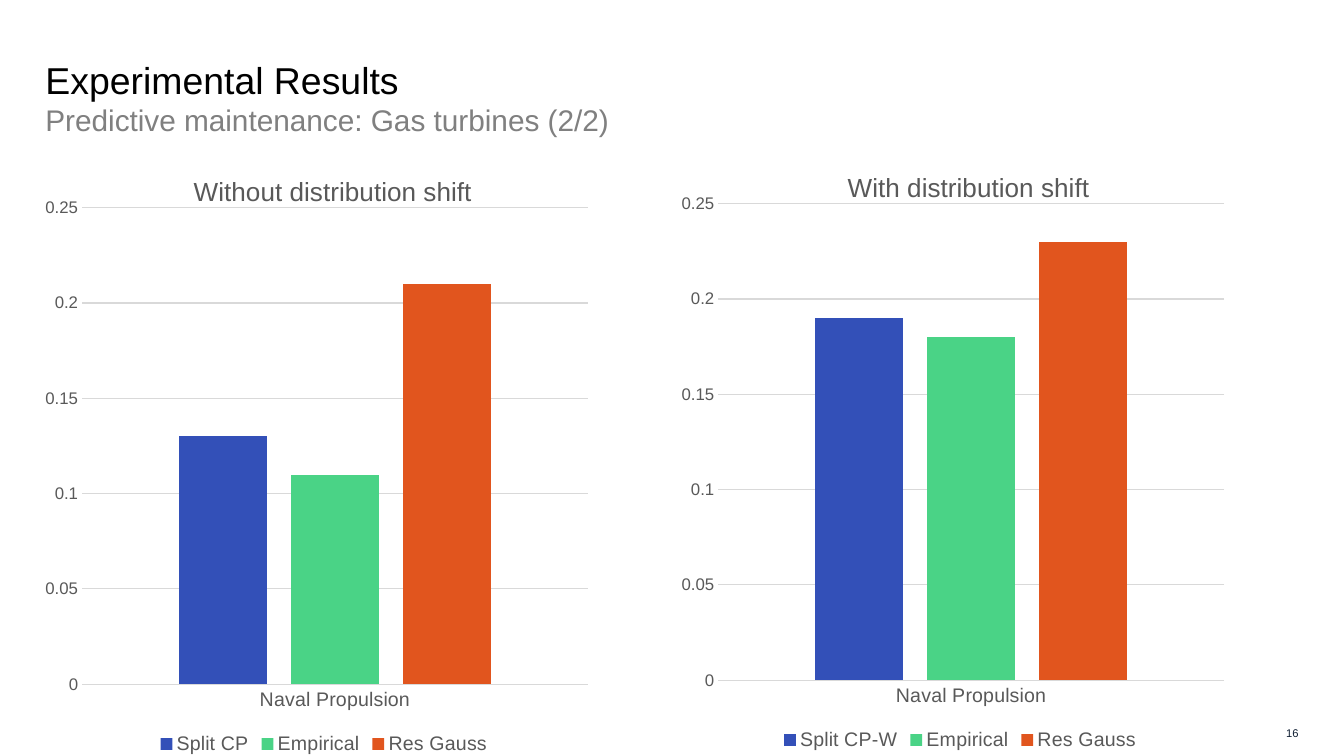
from lxml.etree import SubElement
from pptx import Presentation
from pptx.chart.data import CategoryChartData
from pptx.dml.color import RGBColor
from pptx.enum.chart import XL_CHART_TYPE, XL_LEGEND_POSITION, XL_TICK_MARK
from pptx.enum.text import MSO_ANCHOR, PP_ALIGN
from pptx.oxml.ns import qn
from pptx.util import Inches, Pt

W, H = 13.33, 7.5
FONT = "Arial"
COLORS = {"title": "000000", "subtitle": "808080", "label": "595959",
          "grid": "D9D9D9", "number": "0F1E32",
          "bars": ["3350B8", "4AD386", "E1551E"]}
LEFT = 0.45
CHART_W, CHART_H = 5.52, 6.07


def rgb(hex_color):
    return RGBColor.from_string(hex_color)


def style_font(font, size, color):
    font.name, font.size, font.bold = FONT, Pt(size), False
    font.color.rgb = rgb(color)


def add_run(p, text, size, color):
    r = p.add_run()
    r.text = text
    style_font(r.font, size, color)


def place(sp, box):
    sp.left, sp.top, sp.width, sp.height = map(Inches, box)


def clear_margins(tf):
    tf.margin_left = tf.margin_right = tf.margin_top = tf.margin_bottom = 0
    tf.word_wrap = True
    tf.vertical_anchor = MSO_ANCHOR.MIDDLE


def set_layout(parent, **shares):
    """Fix a chart part's place by shares of the chart's size."""
    layout = parent.find(qn("c:layout"))
    if layout is None:
        layout = SubElement(parent, qn("c:layout"))
        anchor = parent.find(qn("c:tx"))
        if anchor is None:
            parent.insert(0, layout)
        else:
            anchor.addnext(layout)
    manual = SubElement(layout, qn("c:manualLayout"))
    if "w" in shares:
        SubElement(manual, qn("c:layoutTarget")).set("val", "inner")
    for key in "xy":
        SubElement(manual, qn(f"c:{key}Mode")).set("val", "edge")
    for key, value in shares.items():
        SubElement(manual, qn(f"c:{key}")).set("val", str(value))


def add_heading(s, box, title, subtitle):
    sp = s.shapes.title
    place(sp, box)
    tf = sp.text_frame
    clear_margins(tf)
    p = tf.paragraphs[0]
    p.alignment = PP_ALIGN.LEFT
    add_run(p, title, 26.7, COLORS["title"])
    p.add_line_break()
    add_run(p, subtitle, 21.3, COLORS["subtitle"])


def add_bar_chart(s, box, title, title_x, values):
    data = CategoryChartData()
    data.categories = ["Naval Propulsion"]
    for name, value in values.items():
        data.add_series(name, [value])
    chart = s.shapes.add_chart(XL_CHART_TYPE.COLUMN_CLUSTERED,
                               *map(Inches, box), data).chart
    style_font(chart.font, 10, COLORS["title"])

    chart.has_title = True
    p = chart.chart_title.text_frame.paragraphs[0]
    add_run(p, title, 18.67, COLORS["label"])
    chart.chart_title.include_in_layout = False
    set_layout(chart.chart_title._element, x=title_x, y=0.037)

    chart.has_legend = True
    chart.legend.position = XL_LEGEND_POSITION.BOTTOM
    chart.legend.include_in_layout = False
    style_font(chart.legend.font, 14, COLORS["label"])

    plot = chart.plots[0]
    plot.gap_width, plot.overlap, plot.vary_by_categories = 219, -27, False
    for series, color in zip(plot.series, COLORS["bars"]):
        series.format.fill.solid()
        series.format.fill.fore_color.rgb = rgb(color)

    cat, val = chart.category_axis, chart.value_axis
    for axis, size in ((cat, 14), (val, 12)):
        axis.major_tick_mark = axis.minor_tick_mark = XL_TICK_MARK.NONE
        style_font(axis.tick_labels.font, size, COLORS["label"])
    val.minimum_scale, val.maximum_scale, val.major_unit = 0, 0.25, 0.05
    val.format.line.fill.background()
    for line in (cat.format.line, val.major_gridlines.format.line):
        line.color.rgb = rgb(COLORS["grid"])
        line.width = Pt(0.75)
    plot_area = chart._chartSpace.chart.plotArea
    set_layout(plot_area, x=0.065, y=0.099, w=0.91, h=0.779)


def add_slide_number(s, box, number):
    tf = s.shapes.add_textbox(*map(Inches, box)).text_frame
    clear_margins(tf)
    p = tf.paragraphs[0]
    p.alignment = PP_ALIGN.RIGHT
    add_run(p, number, 8, COLORS["number"])


def main():
    prs = Presentation()
    prs.slide_width, prs.slide_height = Inches(W), Inches(H)
    s = prs.slides.add_slide(prs.slide_layouts[5])
    add_slide_number(s, (12.36, 7.14, 0.52, 0.26), "16")
    add_bar_chart(s, (LEFT, 1.46, CHART_W, CHART_H),
                  "Without distribution shift", 0.257,
                  {"Split CP": 0.13, "Empirical": 0.11, "Res Gauss": 0.21})
    add_bar_chart(s, (6.76, 1.42, CHART_W, CHART_H),
                  "With distribution shift", 0.289,
                  {"Split CP-W": 0.19, "Empirical": 0.18, "Res Gauss": 0.23})
    add_heading(s, (LEFT, 0.52, 9.87, 0.89), "Experimental Results",
                "Predictive maintenance: Gas turbines (2/2)")
    prs.save("out.pptx")


if __name__ == "__main__":
    main()
